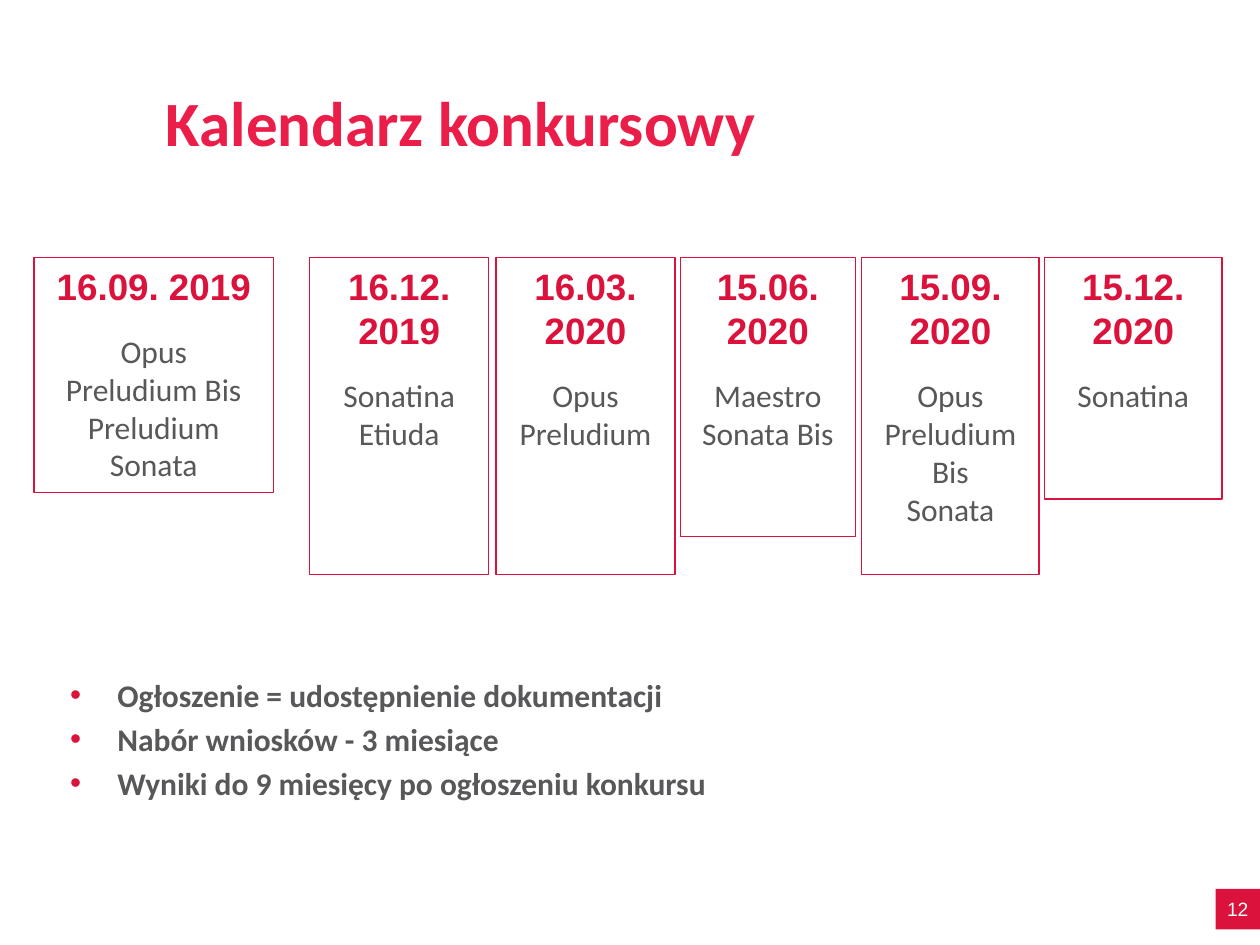
from pptx import Presentation
from pptx.dml.color import RGBColor
from pptx.enum.shapes import MSO_SHAPE
from pptx.enum.text import MSO_ANCHOR, PP_ALIGN
from pptx.oxml.ns import qn
from pptx.util import Pt
from lxml import etree

RECTANGLE = MSO_SHAPE.RECTANGLE
TOP, MIDDLE, BOTTOM = MSO_ANCHOR.TOP, MSO_ANCHOR.MIDDLE, MSO_ANCHOR.BOTTOM
LEFT, CENTER = PP_ALIGN.LEFT, PP_ALIGN.CENTER

CALLS_TOP = 147
# left, width, height, date, programmes
CALLS = [
    (19.5, 136.8, 134.6, "16.09. 2019", ["Opus", "Preludium Bis", "Preludium", "Sonata"]),
    (177, 102.2, 181.4, "16.12. 2019", ["Sonatina", "Etiuda"]),
    (283.5, 102.2, 181.4, "16.03. 2020", ["Opus", "Preludium"]),
    (388.8, 100, 159.8, "15.06. 2020", ["Maestro", "Sonata Bis"]),
    (492.4, 101.4, 181.4, "15.09. 2020", ["Opus", "Preludium Bis", "Sonata"]),
    (596.9, 101.4, 138.2, "15.12. 2020", ["Sonatina"]),
]
RULES = [
    "Ogłoszenie = udostępnienie dokumentacji",
    "Nabór wniosków - 3 miesiące",
    "Wyniki do 9 miesięcy po ogłoszeniu konkursu",
]


def color(hex_text):
    return RGBColor.from_string(hex_text)


class CalendarSlide:
    RED, TITLE_RED, GRAY, WHITE = "DB133C", "EB1D49", "58585A", "FFFFFF"
    HEADING_FONT, BODY_FONT = "Arial", "Calibri"

    def __init__(self, presentation):
        self.slide = presentation.slides.add_slide(presentation.slide_layouts[6])

    def add_line(self, frame, text, size, font, hex_text, bold=False, align=LEFT, before=0):
        """Fill the first paragraph if it is empty, otherwise append one."""
        paragraph = frame.paragraphs[0]
        if paragraph.runs:
            paragraph = frame.add_paragraph()
            paragraph.space_before = Pt(before)
        paragraph.alignment = align
        run = paragraph.add_run()
        run.text = text
        run.font.size, run.font.name, run.font.bold = Pt(size), font, bold
        run.font.color.rgb = color(hex_text)
        return paragraph

    def text_box(self, left, top, width, height, anchor=TOP):
        shape = self.slide.shapes.add_textbox(Pt(left), Pt(top), Pt(width), Pt(height))
        frame = shape.text_frame
        frame.word_wrap = True
        frame.vertical_anchor = anchor
        return frame

    def rectangle(self, left, top, width, height, anchor, fill=None, line=None):
        shape = self.slide.shapes.add_shape(
            RECTANGLE, Pt(left), Pt(top), Pt(width), Pt(height))
        shape.shadow.inherit = False
        if fill:
            shape.fill.solid()
            shape.fill.fore_color.rgb = color(fill)
        else:
            shape.fill.background()
        if line:
            shape.line.color.rgb = color(line)
            shape.line.width = Pt(0.75)
        else:
            shape.line.fill.background()
        frame = shape.text_frame
        frame.word_wrap = True
        frame.vertical_anchor = anchor
        return frame

    def title(self, text):
        frame = self.text_box(87.8, 5.8, 596, 88.5, BOTTOM)
        self.add_line(frame, text, 36, self.BODY_FONT, self.TITLE_RED, bold=True)

    def call(self, left, width, height, date, programmes):
        frame = self.rectangle(left, CALLS_TOP, width, height, TOP, line=self.RED)
        self.add_line(frame, date, 21, self.HEADING_FONT, self.RED, True, CENTER)
        for index, programme in enumerate(programmes):
            self.add_line(frame, programme, 18, self.BODY_FONT, self.GRAY,
                          align=CENTER, before=0 if index else 14)

    def add_bullet(self, paragraph):
        properties = paragraph._p.get_or_add_pPr()
        properties.set("marL", str(Pt(27)))
        properties.set("indent", str(Pt(-27)))
        bullet_color = etree.SubElement(properties, qn("a:buClr"))
        etree.SubElement(bullet_color, qn("a:srgbClr"), val=self.RED)
        etree.SubElement(properties, qn("a:buFont"), typeface=self.HEADING_FONT)
        etree.SubElement(properties, qn("a:buChar"), char="•")

    def bullets(self, lines):
        frame = self.text_box(33, 382.5, 596, 102)
        for line in lines:
            paragraph = self.add_line(frame, line, 18, self.BODY_FONT, self.GRAY,
                                      bold=True, before=3.6)
            self.add_bullet(paragraph)

    def page_number(self, number):
        frame = self.rectangle(694.6, 508, 25.4, 23.2, MIDDLE, fill=self.RED)
        frame.margin_left = frame.margin_right = 0
        frame.margin_top = frame.margin_bottom = 0
        frame.word_wrap = False
        self.add_line(frame, number, 11, self.HEADING_FONT, self.WHITE, align=CENTER)


def main():
    presentation = Presentation()
    presentation.slide_width, presentation.slide_height = Pt(720), Pt(540)
    calendar = CalendarSlide(presentation)
    calendar.title("Kalendarz konkursowy")
    for call in CALLS:
        calendar.call(*call)
    calendar.bullets(RULES)
    calendar.page_number("12")
    presentation.save("out.pptx")


if __name__ == "__main__":
    main()
